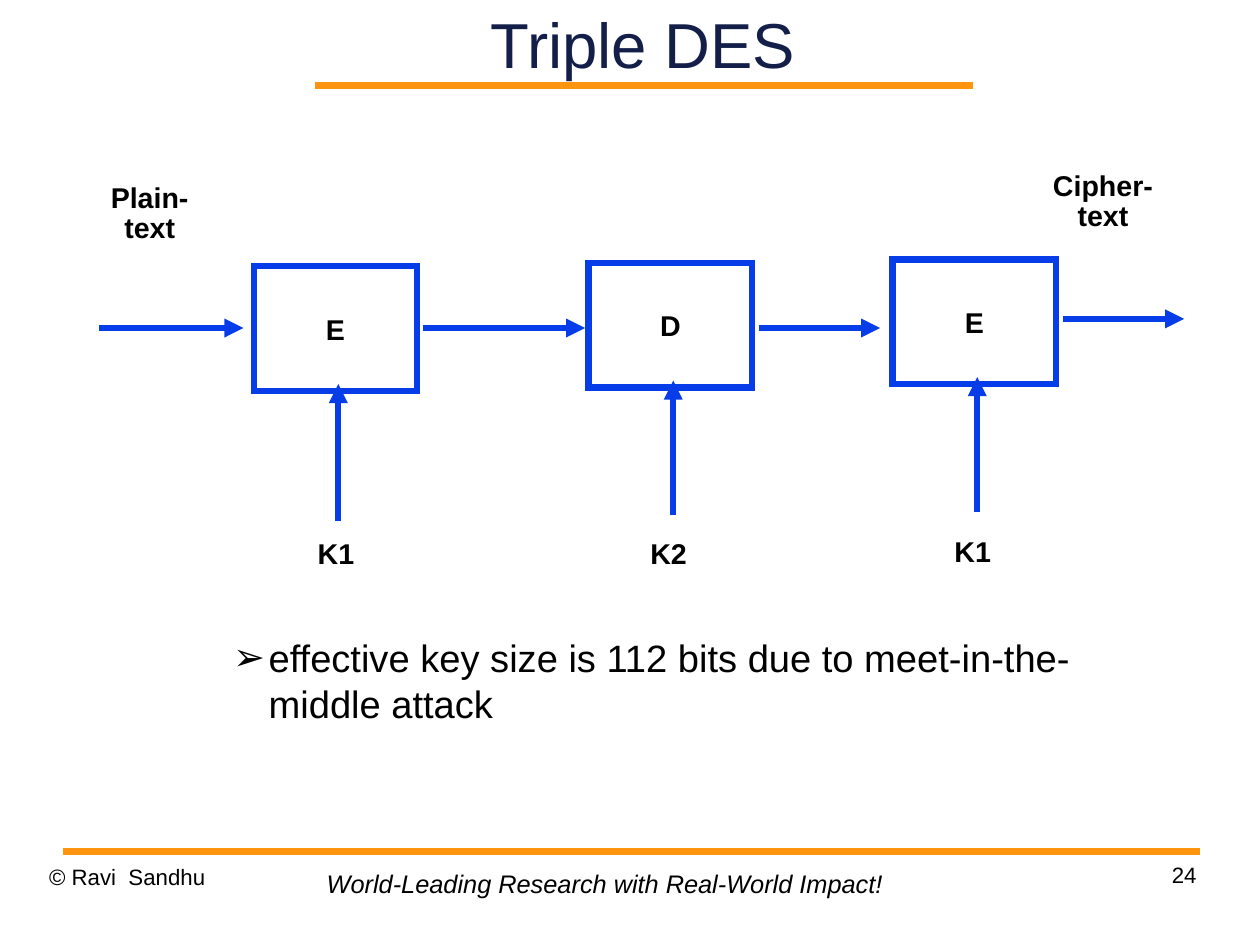
"""Build the Triple DES slide."""
from lxml.etree import SubElement as Sub
from pptx import Presentation
from pptx.dml.color import RGBColor as RGB
from pptx.enum.shapes import MSO_CONNECTOR as Conn, MSO_SHAPE as Shape
from pptx.enum.text import MSO_ANCHOR as Anchor, MSO_AUTO_SIZE as Auto, PP_ALIGN as Align
from pptx.oxml.ns import qn
from pptx.util import Inches, Pt

HUES = {"ink": "000000", "navy": "131F49", "blue": "063DE8", "gold": "FF950E"}
SIZE = (28 / 2.54, 21 / 2.54)
TITLE = "Triple DES"
POINT = "effective key size is 112 bits due to meet-in-the-middle attack"
RULES = [(2.76, 0.75, 8.51), (0.55, 7.45, 10.5)]
WIDE, HIGH = 1.43, 1.09
TIP = (0.74, 1.03)
STAGES = [
    {"name": "E", "at": (2.22, 2.33), "key": "K1", "tag": (2.71, 4.7), "foot": 4.56},
    {"name": "D", "at": (5.15, 2.3), "key": "K2", "tag": (5.62, 4.7), "foot": 4.51},
    {"name": "E", "at": (7.81, 2.27), "key": "K1", "tag": (8.28, 4.68), "foot": 4.48},
]
FLOWS = [(0.87, 2.87, 2.13), (3.7, 2.87, 5.12), (6.64, 2.87, 7.7), (9.3, 2.79, 10.36)]
ENDS = [("Plain-\ntext", (0.78, 1.59, 1.06, 0.76)),
        ("Cipher-\ntext", (8.99, 1.48, 1.32, 0.76))]
NOTES = [
    ("© Ravi  Sandhu", (0.43, 7.55, 2.57, 0.57), {"size": 14, "gap": 1.01}),
    ("24", (7.9, 7.53, 2.57, 0.57), {"size": 14, "gap": 1.01, "align": Align.RIGHT}),
    ("World-Leading Research with Real-World Impact!", (2.76, 7.55, 5.08, 0.37),
     {"size": 16, "italic": True, "pad": (0.1, 0.05), "wrap": False}),
]
LABEL = {"bold": True, "pad": (0.07, 0.03), "gap": 0.87, "wrap": False}


def write(shape, text, size=18, hue="ink", bold=False, italic=False, align=Align.LEFT,
          anchor=Anchor.TOP, pad=(0, 0), gap=1.0, wrap=True, bullet=None):
    frame = shape.text_frame
    frame.text = text
    frame.auto_size = Auto.NONE
    frame.word_wrap = wrap
    frame.vertical_anchor = anchor
    frame.margin_left = frame.margin_right = Inches(pad[0])
    frame.margin_top = frame.margin_bottom = Inches(pad[1])
    for para in frame.paragraphs:
        para.alignment = align
        para.line_spacing = gap
        para.space_before = Pt(0)
        if bullet:
            para.level = 1
            props = para._p.get_or_add_pPr()
            props.set("marL", str(Inches(0.94)))
            props.set("indent", str(Inches(-0.31)))
            tint = Sub(props, qn("a:buClr"))
            Sub(tint, qn("a:srgbClr"), val=HUES[hue])
            Sub(props, qn("a:buFont"), typeface="Arial")
            Sub(props, qn("a:buChar"), char=bullet)
        for run in para.runs:
            font = run.font
            font.name, font.size = "Arial", Pt(size)
            font.bold, font.italic = bold, italic
            font.color.rgb = RGB.from_string(HUES[hue])


def place(shape, spot):
    shape.left, shape.top, shape.width, shape.height = map(Inches, spot)
    return shape


def label(slide, text, spot, **form):
    write(slide.shapes.add_textbox(*map(Inches, spot)), text, **form)


def stroke(shape, hue="blue", width=4.0):
    shape.line.color.rgb = RGB.from_string(HUES[hue])
    shape.line.width = Pt(width)
    edge = shape.line._get_or_add_ln()
    Sub(edge, qn("a:miter"), lim="800000")
    return edge


def link(slide, start, end, head=True, **form):
    line = slide.shapes.add_connector(Conn.STRAIGHT, *map(Inches, start + end))
    edge = stroke(line, **form)
    if head:
        Sub(edge, qn("a:tailEnd"), type="triangle")
    Sub(line._element.spPr, qn("a:effectLst"))


def stage(slide, item):
    left, top = item["at"]
    box = slide.shapes.add_shape(Shape.RECTANGLE, *map(Inches, (left, top, WIDE, HIGH)))
    box.fill.background()
    stroke(box)
    box.shadow.inherit = False
    write(box, item["name"], bold=True, align=Align.CENTER, anchor=Anchor.MIDDLE,
          pad=(0.1, 0.05), wrap=False)
    mid = left + TIP[0]
    link(slide, (mid, item["foot"]), (mid, top + TIP[1]))
    label(slide, item["key"], item["tag"] + (0.58, 0.42), **LABEL)


def main():
    deck = Presentation()
    deck.slide_width, deck.slide_height = map(Inches, SIZE)
    slide = deck.slides.add_slide(deck.slide_layouts[1])
    for left, top, right in RULES:
        link(slide, (left, top), (right, top), head=False, hue="gold", width=4.31)
    for text, spot, form in NOTES:
        label(slide, text, spot, **form)
    write(place(slide.shapes.title, (2.41, 0, 6.43, 0.75)), TITLE, size=40, hue="navy",
          align=Align.CENTER, anchor=Anchor.MIDDLE)
    write(place(slide.placeholders[1], (1.31, 5.5, 8.5, 1.08)), POINT, size=24,
          pad=(0.1, 0.05), bullet="➢")
    for item in STAGES:
        stage(slide, item)
    for left, top, right in FLOWS:
        link(slide, (left, top), (right, top))
    for text, spot in ENDS:
        label(slide, text, spot, align=Align.CENTER, **LABEL)
    deck.save("out.pptx")


if __name__ == "__main__":
    main()
